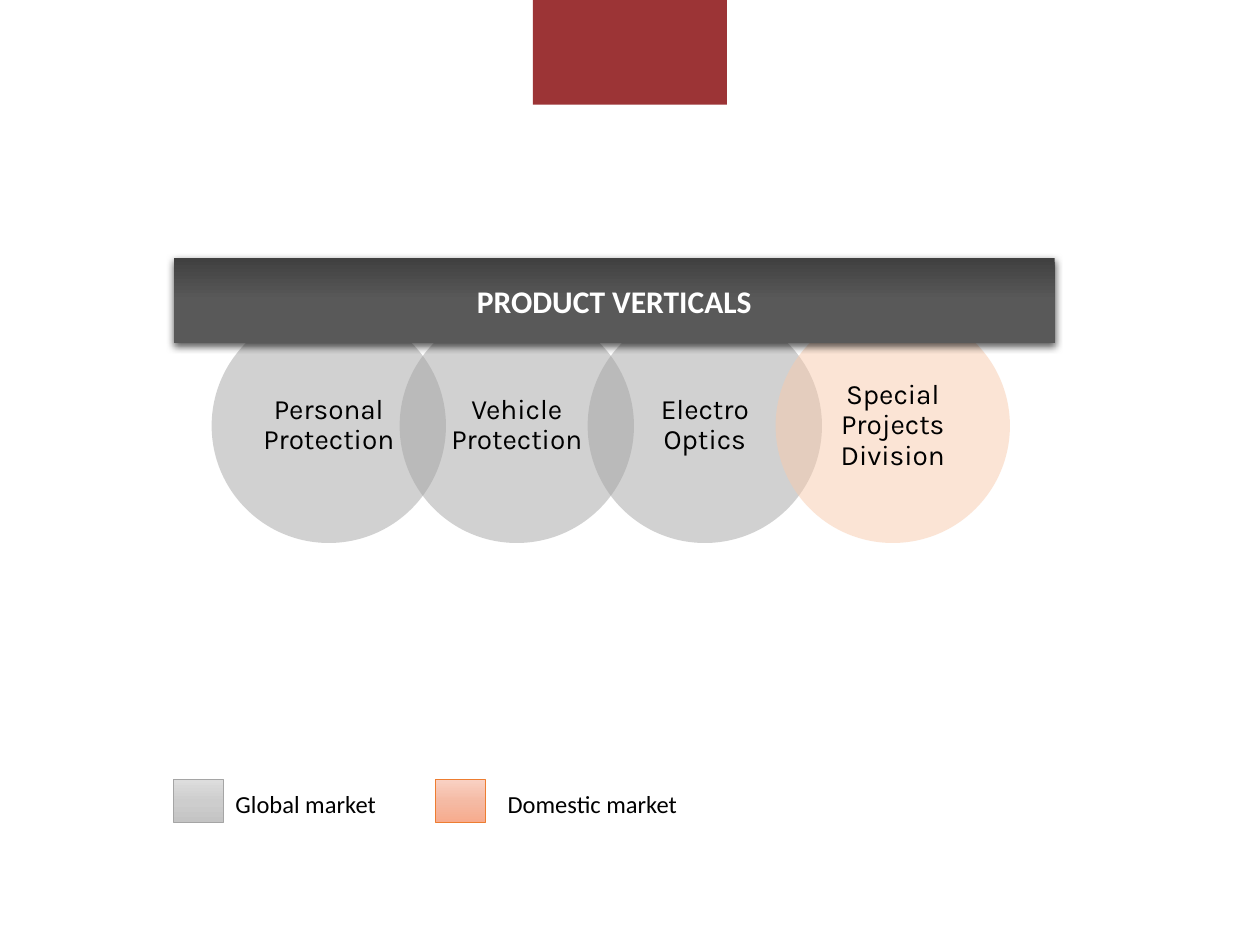
from lxml.etree import SubElement
from pptx import Presentation
from pptx.dml.color import RGBColor
from pptx.enum.shapes import MSO_SHAPE
from pptx.enum.text import MSO_ANCHOR, PP_ALIGN
from pptx.oxml.ns import qn
from pptx.util import Inches, Pt

COLORS = {
    "red": "9C3436", "gray": "A5A5A5", "peach": "F8CBAD", "orange": "ED7D31",
    "black": "000000", "white": "FFFFFF",
}
GRADIENTS = {
    "banner": ("404040", "595959", "595959"),
    "gray": ("DDDDDD", "CDCDCD", "C4C4C4"),
    "orange": ("F9D1C3", "F5BAA4", "F7AB8D"),
}


class SlideBuilder:
    """Draws styled elements on a slide gridded into 100 columns and 75 rows."""

    def __init__(self, prs):
        self.s = prs.slides.add_slide(prs.slide_layouts[6])
        self.col = prs.slide_width / 100
        self.row = prs.slide_height / 75

    def box(self, x, y, w, h):
        return (round(x * self.col), round(y * self.row),
                round(w * self.col), round(h * self.row))

    def shape(self, kind, x, y, w, h, fill):
        sp = self.s.shapes.add_shape(kind, *self.box(x, y, w, h))
        sp.shadow.inherit = False
        sp.fill.solid()
        sp.fill.fore_color.rgb = RGBColor.from_string(COLORS[fill])
        sp.line.fill.background()
        return sp

    def gradient(self, sp, name):
        solid = sp.element.spPr.find(qn("a:solidFill"))
        grad = solid.makeelement(qn("a:gradFill"), {"rotWithShape": "1"})
        stops = SubElement(grad, qn("a:gsLst"))
        for pos, color in zip((0, 50000, 100000), GRADIENTS[name]):
            gs = SubElement(stops, qn("a:gs"), pos=str(pos))
            SubElement(gs, qn("a:srgbClr"), val=color)
        SubElement(grad, qn("a:lin"), ang="5400000", scaled="0")
        solid.getparent().replace(solid, grad)

    def label(self, sp, text, size, font="Calibri", color="black",
              align=PP_ALIGN.CENTER, bold=False, spacing=1.0):
        tf = sp.text_frame
        tf.word_wrap = True
        tf.vertical_anchor = MSO_ANCHOR.MIDDLE
        tf.text = text
        p = tf.paragraphs[0]
        p.alignment = align
        p.line_spacing = spacing
        r = p.runs[0]
        r.font.size = Pt(size)
        r.font.name = font
        r.font.bold = bold
        r.font.color.rgb = RGBColor.from_string(COLORS[color])

    def circle(self, x, y, d, text, fill):
        sp = self.shape(MSO_SHAPE.OVAL, x, y, d, d, fill)
        color = sp.element.spPr.find(qn("a:solidFill"))[0]
        SubElement(color, qn("a:alpha"), val="50000")
        tf = sp.text_frame
        tf.margin_top = tf.margin_bottom = Inches(0.02)
        self.label(sp, text, 16, "Karla", spacing=0.9)

    def banner(self, x, y, w, h, text):
        sp = self.shape(MSO_SHAPE.RECTANGLE, x, y, w, h, "black")
        self.gradient(sp, "banner")
        effects = sp.element.spPr.find(qn("a:effectLst"))
        shadow = SubElement(effects, qn("a:outerShdw"), blurRad=str(int(Pt(4.5))),
                            dist=str(int(Pt(1.5))), dir="5400000", rotWithShape="0")
        color = SubElement(shadow, qn("a:srgbClr"), val=COLORS["black"])
        SubElement(color, qn("a:alpha"), val="63000")
        self.label(sp, text, 18, color="white", bold=True)

    def legend(self, x, y, text, name, text_x, text_w):
        sp = self.shape(MSO_SHAPE.RECTANGLE, x, y, 3.9, 3.4, name)
        self.gradient(sp, name)
        sp.line.color.rgb = RGBColor.from_string(COLORS[name])
        sp.line.width = Pt(0.5)
        tb = self.s.shapes.add_textbox(*self.box(text_x, y + 0.2, text_w, 3.4))
        self.label(tb, text, 14, align=PP_ALIGN.LEFT)


def main():
    prs = Presentation()
    prs.slide_width, prs.slide_height = Inches(10), Inches(7.5)
    b = SlideBuilder(prs)
    b.shape(MSO_SHAPE.RECTANGLE, 42.3, -0.2, 15.4, 8.5, "red")
    verticals = ("Personal Protection", "Vehicle Protection",
                 "Electro Optics", "Special Projects Division")
    for i, text in enumerate(verticals):
        fill = "peach" if i == len(verticals) - 1 else "gray"
        b.circle(16.8 + 14.92 * i, 24.5, 18.6, text, fill)
    b.banner(13.8, 20.5, 69.9, 6.7, "PRODUCT VERTICALS")
    b.legend(13.8, 61.9, "Global market", "gray", 17.7, 16.9)
    b.legend(34.6, 61.9, "Domestic market", "orange", 39.3, 21.9)
    prs.save("out.pptx")


if __name__ == "__main__":
    main()
